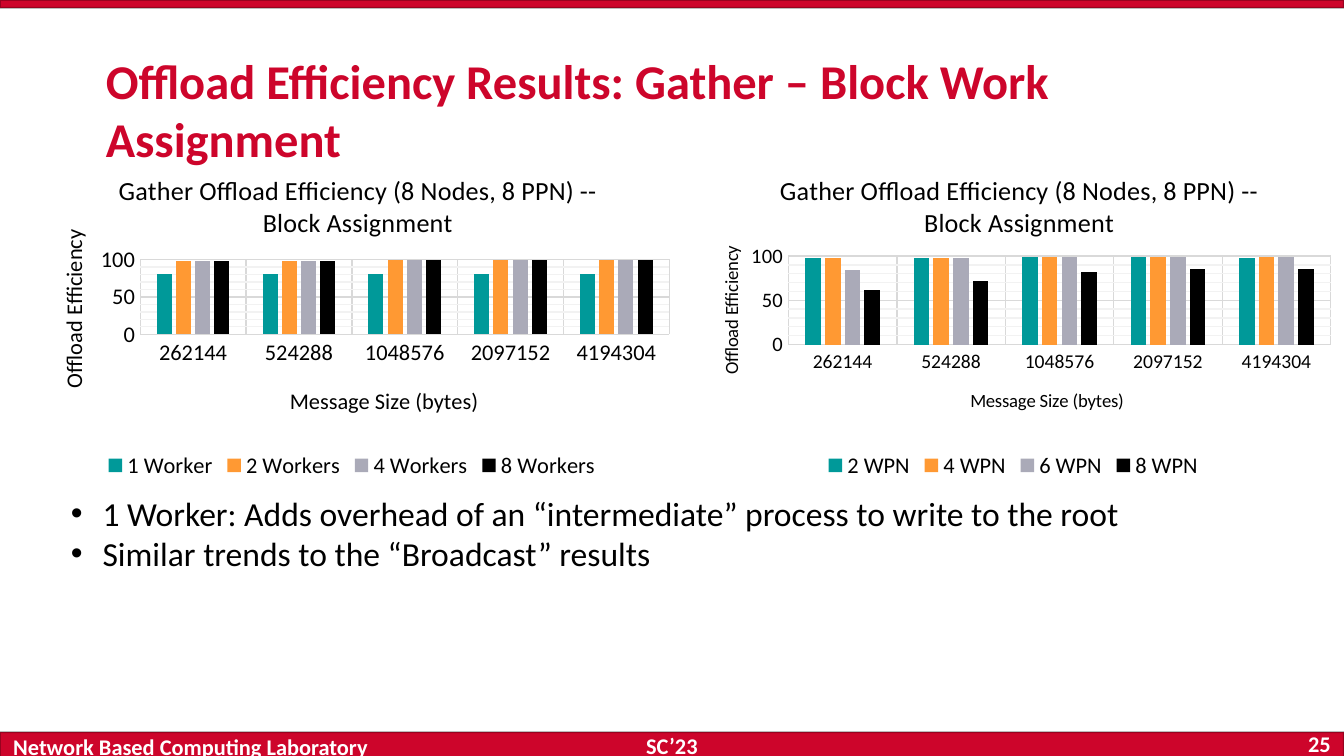
from pptx import Presentation
from pptx.chart.data import CategoryChartData
from pptx.dml.color import RGBColor
from pptx.enum.chart import XL_CHART_TYPE as ChartType, XL_LEGEND_POSITION as LegendPosition
from pptx.enum.chart import XL_TICK_MARK as TickMark
from pptx.enum.shapes import MSO_SHAPE as Shape
from pptx.enum.text import MSO_ANCHOR as Anchor, PP_ALIGN as Align
from pptx.oxml import parse_xml
from pptx.oxml.ns import nsdecls, qn
from pptx.util import Cm, Pt
from lxml.etree import SubElement

FONT = "Calibri"
COLORS = {
    "red": "CD052B", "black": "000000", "white": "FFFFFF", "grid": "D9D9D9",
    "minor": "F2F2F2", "teal": "009999", "orange": "FF9933", "gray": "AAAAB8",
}
SERIES_COLORS = ["teal", "orange", "gray", "black"]
SIZES = ["262144", "524288", "1048576", "2097152", "4194304"]
CHART_WIDTH, CHART_HEIGHT = 12.5, 6.43
BAND = [98, 98, 99, 99, 99]

WORKERS = {
    "1 Worker": [81] * 5, "2 Workers": BAND, "4 Workers": BAND, "8 Workers": BAND,
}
WORKERS_PER_NODE = {
    "2 WPN": [98, 98, 99, 99, 98], "4 WPN": BAND,
    "6 WPN": [84, 98, 99, 99, 99], "8 WPN": [62, 72, 82, 85, 85],
}


def rgb(name):
    return RGBColor.from_string(COLORS[name])


def style_font(font, size, color="black", bold=False):
    font.name, font.size, font.bold = FONT, Pt(size), bold
    font.color.rgb = rgb(color)


def add_bar(page, top, height):
    bar = page.shapes.add_shape(Shape.RECTANGLE, 0, Cm(top), Cm(25.4), Cm(height))
    bar.shadow.inherit = False
    bar.fill.solid()
    bar.fill.fore_color.rgb = rgb("red")
    bar.line.width = Pt(1)
    bar.line.color.rgb = rgb("black")
    line_color = bar.line._ln.find(".//" + qn("a:srgbClr"))
    SubElement(line_color, qn("a:alpha"), val="25000")


def add_bullet(para):
    props = para._p.get_or_add_pPr()
    props.set("marL", str(Cm(0.6)))
    props.set("indent", str(Cm(-0.6)))
    SubElement(props, qn("a:buFont"), typeface="Arial")
    SubElement(props, qn("a:buChar"), char="•")


def add_text(page, lines, left, top, width, height, *, size, color="black",
             bold=False, align=Align.LEFT, anchor=Anchor.TOP, bullets=False):
    box = page.shapes.add_textbox(Cm(left), Cm(top), Cm(width), Cm(height))
    frame = box.text_frame
    frame.word_wrap = True
    frame.vertical_anchor = anchor
    for index, line in enumerate(lines):
        para = frame.add_paragraph() if index else frame.paragraphs[0]
        para.alignment = align
        if bullets:
            add_bullet(para)
        span = para.add_run()
        span.text = line
        style_font(span.font, size, color, bold)


def manual_layout(x, y, width=None, height=None):
    """Return a c:layout element; the numbers are fractions of the chart."""
    parts = '<c:xMode val="edge"/><c:yMode val="edge"/>'
    values = f'<c:x val="{x}"/><c:y val="{y}"/>'
    if width is not None:
        parts = '<c:layoutTarget val="inner"/>' + parts
        values += f'<c:w val="{width}"/><c:h val="{height}"/>'
    return parse_xml(f'<c:layout {nsdecls("c")}><c:manualLayout>{parts}{values}'
                     '</c:manualLayout></c:layout>')


def set_title(owner, text, size, place):
    """Give a chart or an axis a title at a fixed place."""
    owner.has_title = True
    title = owner.axis_title if hasattr(owner, "axis_title") else owner.chart_title
    para = title.text_frame.paragraphs[0]
    span = para.add_run()
    span.text = text
    style_font(span.font, size)
    element = title._element
    for old in element.findall(qn("c:layout")):
        element.remove(old)
    element.find(qn("c:tx")).addnext(manual_layout(*place))


def style_axis(axis, size):
    axis.major_tick_mark = axis.minor_tick_mark = TickMark.NONE
    axis.has_major_gridlines = True
    grid = axis.major_gridlines.format.line
    grid.color.rgb, grid.width = rgb("grid"), Pt(0.75)
    style_font(axis.tick_labels.font, size)


def add_minor_grid(axis):
    axis.has_minor_gridlines = True
    grid = axis._element.find(qn("c:minorGridlines"))
    grid.append(parse_xml(
        f'<c:spPr {nsdecls("c", "a")}><a:ln w="{Pt(0.75)}"><a:solidFill>'
        f'<a:srgbClr val="{COLORS["minor"]}"/></a:solidFill></a:ln></c:spPr>'))


def add_column_chart(page, left, series, *, plot, title_place, category, value):
    """category and value each hold label size, title size and title place."""
    data = CategoryChartData()
    data.categories = SIZES
    for name, values in series.items():
        data.add_series(name, values)
    chart = page.shapes.add_chart(
        ChartType.COLUMN_CLUSTERED, Cm(left), Cm(2.72),
        Cm(CHART_WIDTH), Cm(CHART_HEIGHT), data).chart
    style_font(chart.font, 12)
    set_title(chart, "Gather Offload Efficiency (8 Nodes, 8 PPN) -- Block Assignment",
              14, title_place)

    columns = chart.plots[0]
    columns.gap_width, columns.overlap = 219, -27
    columns.vary_by_categories = False
    for column, color in zip(columns.series, SERIES_COLORS):
        column.format.fill.solid()
        column.format.fill.fore_color.rgb = rgb(color)

    for axis, text, (label_size, title_size, place) in (
            (chart.category_axis, "Message Size (bytes)", category),
            (chart.value_axis, "Offload Efficiency", value)):
        style_axis(axis, label_size)
        set_title(axis, text, title_size, place)
    base = chart.category_axis.format.line
    base.color.rgb, base.width = rgb("grid"), Pt(0.75)
    scale = chart.value_axis
    scale.minimum_scale, scale.maximum_scale = 0, 100
    scale.major_unit, scale.minor_unit = 50, 10
    add_minor_grid(scale)
    scale.format.line.fill.background()

    chart.has_legend = True
    chart.legend.position = LegendPosition.BOTTOM
    chart.legend.include_in_layout = False
    style_font(chart.legend.font, 12)

    area = chart._chartSpace.chart.plotArea
    for old in area.findall(qn("c:layout")):
        area.remove(old)
    area.insert(0, manual_layout(*plot))


def add_frame(page):
    """Draw the bars and the footer texts."""
    add_bar(page, 13.84, 0.48)
    add_bar(page, 0, 0.15)
    footer = dict(size=12, color="white", bold=True, anchor=Anchor.MIDDLE)
    add_text(page, ["25"], 23.72, 13.82, 1.68, 0.46, align=Align.RIGHT, **footer)
    add_text(page, ["Network Based Computing Laboratory"],
             0, 13.82, 7.67, 0.58, **footer)
    add_text(page, ["SC’23"], 9.55, 13.92, 6.3, 0.36, align=Align.CENTER, **footer)


def main():
    deck = Presentation()
    deck.slide_width, deck.slide_height = Cm(25.4), Cm(14.29)
    page = deck.slides.add_slide(deck.slide_layouts[6])
    add_frame(page)
    add_text(page, ["Offload Efficiency Results: Gather – Block Work Assignment"],
             1.75, 0.84, 21.9, 1.65, size=26, color="red", bold=True)
    add_column_chart(page, 0.4, WORKERS, plot=(0.18, 0.34, 0.8, 0.22),
                     title_place=(0.14, 0.07), category=(12, 12, (0.4, 0.7)),
                     value=(12, 12, (0.05, 0.24)))
    add_column_chart(page, 12.9, WORKERS_PER_NODE, plot=(0.16, 0.33, 0.82, 0.26),
                     title_place=(0.14, 0.07), category=(10.5, 10, (0.43, 0.71)),
                     value=(11, 10, (0.05, 0.29)))
    add_text(page, ["1 Worker: Adds overhead of an “intermediate” process to write to the root",
                    "Similar trends to the “Broadcast” results"],
             1.09, 9.19, 23.2, 1.8, size=18, bullets=True)
    deck.save("out.pptx")


if __name__ == "__main__":
    main()
